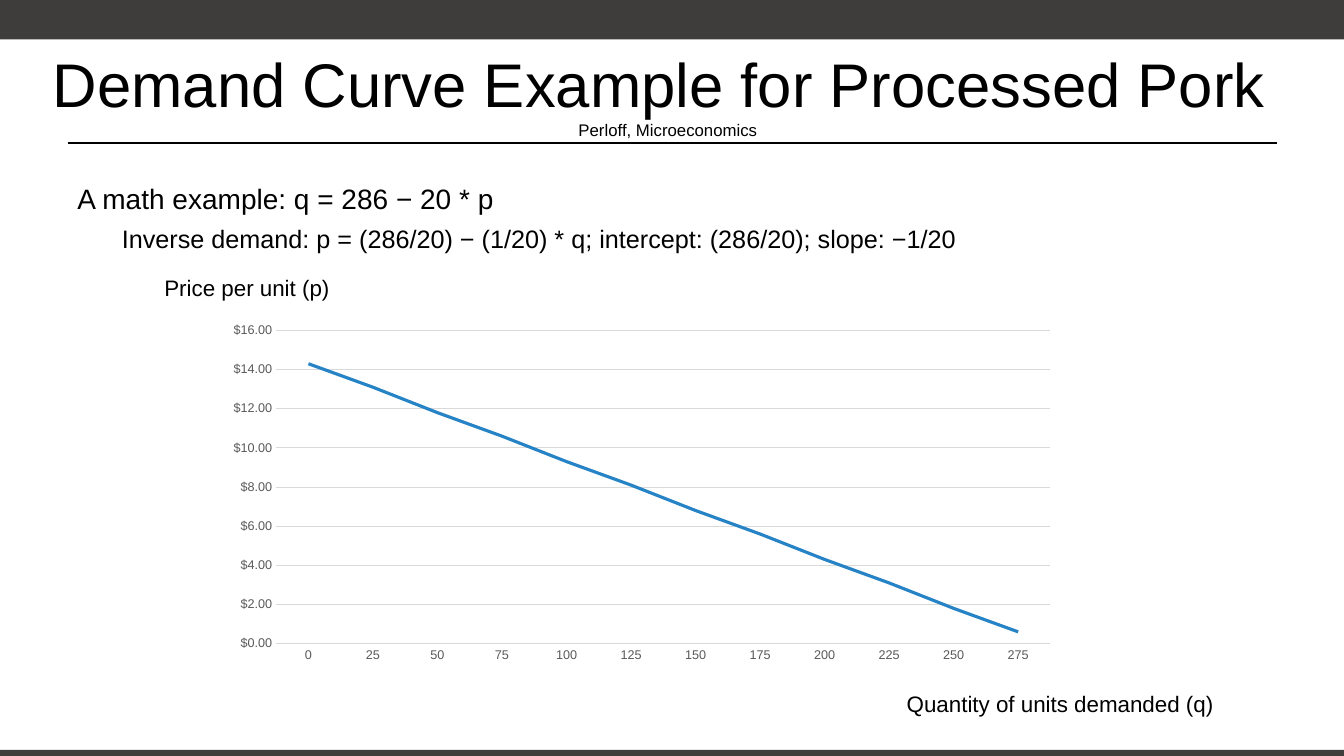
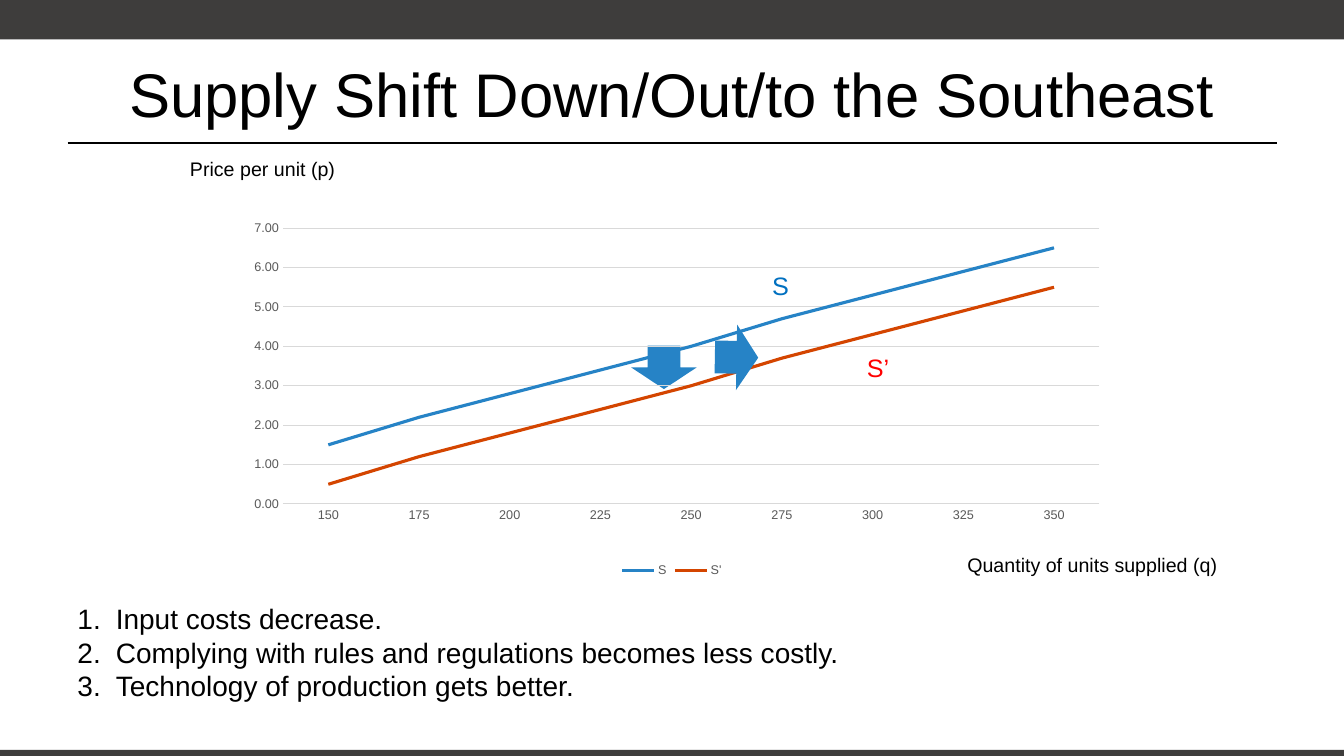
"""Build two slides on demand and supply curves."""
import pptx
import pptx.chart.data
import pptx.dml.color
import pptx.enum.chart
import pptx.enum.shapes
import pptx.enum.text
import pptx.oxml
import pptx.oxml.ns
import pptx.util

Inches = pptx.util.Inches
Pt = pptx.util.Pt
RGB = pptx.dml.color.RGBColor.from_string
SHAPE = pptx.enum.shapes.MSO_SHAPE
ALIGN = pptx.enum.text.PP_ALIGN
ANCHOR = pptx.enum.text.MSO_ANCHOR
TICK = pptx.enum.chart.XL_TICK_MARK
qn = pptx.oxml.ns.qn

FONT = "Arial"
COLORS = {
    "text": "000000", "band": "3E3D3C", "blue": "2683C6", "rust": "D44500",
    "grid": "D9D9D9", "axis": "595959", "supply": "0070C0", "shift": "FF0000",
}


def write(slide, box, lines, size=20, color="text", align=ALIGN.LEFT,
          anchor=ANCHOR.TOP, before=0, numbers=False):
    frame = slide.shapes.add_textbox(*map(Inches, box)).text_frame
    frame.word_wrap = True
    frame.vertical_anchor = anchor
    for i, line in enumerate(lines):
        text, points, indent = line if isinstance(line, tuple) else (line, size, 0)
        para = frame.paragraphs[0] if i == 0 else frame.add_paragraph()
        para.alignment = align
        para.space_before = Pt(before)
        run = para.add_run()
        run.text = text
        run.font.name = FONT
        run.font.size = Pt(points)
        run.font.color.rgb = RGB(COLORS[color])
        props = para._p.get_or_add_pPr()
        if indent:
            props.set("marL", str(Inches(indent)))
        if numbers:
            props.set("marL", str(Inches(0.38)))
            props.set("indent", str(Inches(-0.38)))
            mark = pptx.oxml.parse_xml(
                f'<a:buAutoNum {pptx.oxml.ns.nsdecls("a")} type="arabicPeriod"/>')
            props.append(mark)


def plot(slide, box, cats, series, area, top, step, form):
    data = pptx.chart.data.CategoryChartData()
    data.categories = [str(cat) for cat in cats]
    for name, color, values in series:
        data.add_series(name, values)
    kind = pptx.enum.chart.XL_CHART_TYPE.LINE
    chart = slide.shapes.add_chart(kind, *map(Inches, box), data).chart
    chart.has_title = False
    chart.font.name = FONT
    chart.font.size = Pt(10)
    chart.font.color.rgb = RGB(COLORS["text"])
    chart.plots[0].vary_by_categories = False
    for item, (name, color, values) in zip(chart.plots[0].series, series):
        item.smooth = False
        item.marker.style = pptx.enum.chart.XL_MARKER_STYLE.NONE
        item.format.line.color.rgb = RGB(COLORS[color])
        item.format.line.width = Pt(2.25)

    horiz, vert = chart.category_axis, chart.value_axis
    vert.minimum_scale, vert.maximum_scale, vert.major_unit = 0, top, step
    vert.has_major_gridlines = True
    vert.format.line.fill.background()
    vert.tick_labels.number_format = form
    vert.tick_labels.number_format_is_linked = False
    for rule in (horiz.format.line, vert.major_gridlines.format.line):
        rule.color.rgb = RGB(COLORS["grid"])
        rule.width = Pt(0.75)
    for axis in (horiz, vert):
        axis.major_tick_mark = axis.minor_tick_mark = TICK.NONE
    fonts = [horiz.tick_labels.font, vert.tick_labels.font]

    chart.has_legend = len(series) > 1
    if chart.has_legend:
        chart.legend.position = pptx.enum.chart.XL_LEGEND_POSITION.BOTTOM
        chart.legend.include_in_layout = False
        fonts.append(chart.legend.font)
    for font in fonts:
        font.name = FONT
        font.size = Pt(9)
        font.color.rgb = RGB(COLORS["axis"])

    body = chart.element.find(qn("c:chart"))
    body.addnext(pptx.oxml.parse_xml(
        f'<c:spPr {pptx.oxml.ns.nsdecls("c", "a")}><a:noFill/>'
        '<a:ln><a:noFill/></a:ln></c:spPr>'))
    region = body.find(qn("c:plotArea"))
    for old in region.findall(qn("c:layout")):
        region.remove(old)
    parts = "".join(f'<c:{key} val="{value}"/>' for key, value in zip("xywh", area))
    region.insert(0, pptx.oxml.parse_xml(
        f'<c:layout {pptx.oxml.ns.nsdecls("c")}><c:manualLayout>'
        '<c:layoutTarget val="inner"/><c:xMode val="edge"/><c:yMode val="edge"/>'
        f'{parts}</c:manualLayout></c:layout>'))


deck = pptx.Presentation()
deck.slide_width = Inches(13.33)
deck.slide_height = Inches(7.5)

titles = [
    ((0, 0.3, 13.25, 1.25), ["Demand Curve Example for Processed Pork ",
                             ("Perloff, Microeconomics", 12, 0)]),
    ((0.67, 0.3, 12, 1.25), ["Supply Shift Down/Out/to the Southeast"]),
]
slides = []
for box, lines in titles:
    slide = deck.slides.add_slide(deck.slide_layouts[6])
    for y, height in ((0, 0.39), (7.44, 0.06)):
        band = slide.shapes.add_shape(
            SHAPE.RECTANGLE, 0, Inches(y), deck.slide_width, Inches(height))
        band.shadow.inherit = False
        band.fill.solid()
        band.fill.fore_color.rgb = RGB(COLORS["band"])
        band.line.fill.background()
    rule = slide.shapes.add_connector(
        pptx.enum.shapes.MSO_CONNECTOR.STRAIGHT,
        Inches(0.67), Inches(1.42), Inches(12.67), Inches(1.42))
    rule.line.color.rgb = RGB(COLORS["text"])
    rule.line.width = Pt(1.25)
    rule._element.spPr.append(pptx.oxml.parse_xml(
        f'<a:effectLst {pptx.oxml.ns.nsdecls("a")}/>'))
    write(slide, box, lines, size=44, align=ALIGN.CENTER, anchor=ANCHOR.MIDDLE)
    slides.append(slide)
demand, supply = slides

plot(demand, (1.81, 3.08, 8.94, 3.69), range(0, 276, 25),
     [("Series 1", "blue",
       [14.3, 13.1, 11.8, 10.6, 9.3, 8.1, 6.8, 5.6, 4.3, 3.1, 1.8, 0.6])],
     (0.104, 0.054, 0.859, 0.842), 16, 2, '"$"#,##0.00')
write(demand, (0.67, 1.75, 12, 0.74), [
    "A math example: q = 286 − 20 * p",
    ("Inverse demand: p = (286/20) − (1/20) * q; intercept: (286/20); slope: −1/20",
     18, 0.44),
], before=6)
write(demand, (1.48, 2.67, 1.94, 0.37), ["Price per unit (p)"],
      size=16, align=ALIGN.CENTER)
write(demand, (8.88, 6.8, 3.27, 0.37), ["Quantity of units demanded (q)"],
      size=16, align=ALIGN.CENTER)

write(supply, (0.67, 5.92, 7.95, 1.11), [
    "Input costs decrease.",
    "Complying with rules and regulations becomes less costly.",
    "Technology of production gets better.",
], numbers=True)
write(supply, (7.56, 2.63, 0.33, 0.4), ["S"], size=18, color="supply")
write(supply, (8.5, 3.45, 0.5, 0.4), ["S’"], size=18, color="shift")
arrows = []
for x, y, turn in ((6.26, 3.43, 180), (6.98, 3.33, 91)):
    arrow = supply.shapes.add_shape(
        SHAPE.UP_ARROW, Inches(x), Inches(y), Inches(0.65), Inches(0.43))
    arrow.rotation = turn
    arrow.shadow.inherit = False
    arrow.fill.solid()
    arrow.fill.fore_color.rgb = RGB(COLORS["blue"])
    arrow.line.fill.background()
    arrows.append(arrow)
plot(supply, (2.33, 2.19, 8.67, 3.58), range(150, 351, 25),
     [("S", "blue", [1.5, 2.2, 2.8, 3.4, 4, 4.7, 5.3, 5.9, 6.5]),
      ("S'", "rust", [0.5, 1.2, 1.8, 2.4, 3, 3.7, 4.3, 4.9, 5.5])],
     (0.055, 0.02, 0.934, 0.765), 7, 1, "#,##0.00")
supply.shapes[-1]._element.addnext(arrows[-1]._element)
write(supply, (1.78, 1.53, 1.65, 0.29), ["Price per unit (p)"],
      size=14, align=ALIGN.CENTER, anchor=ANCHOR.MIDDLE)
write(supply, (9.46, 5.44, 2.75, 0.4), ["Quantity of units supplied (q)"],
      size=14, align=ALIGN.CENTER)

deck.save("out.pptx")
